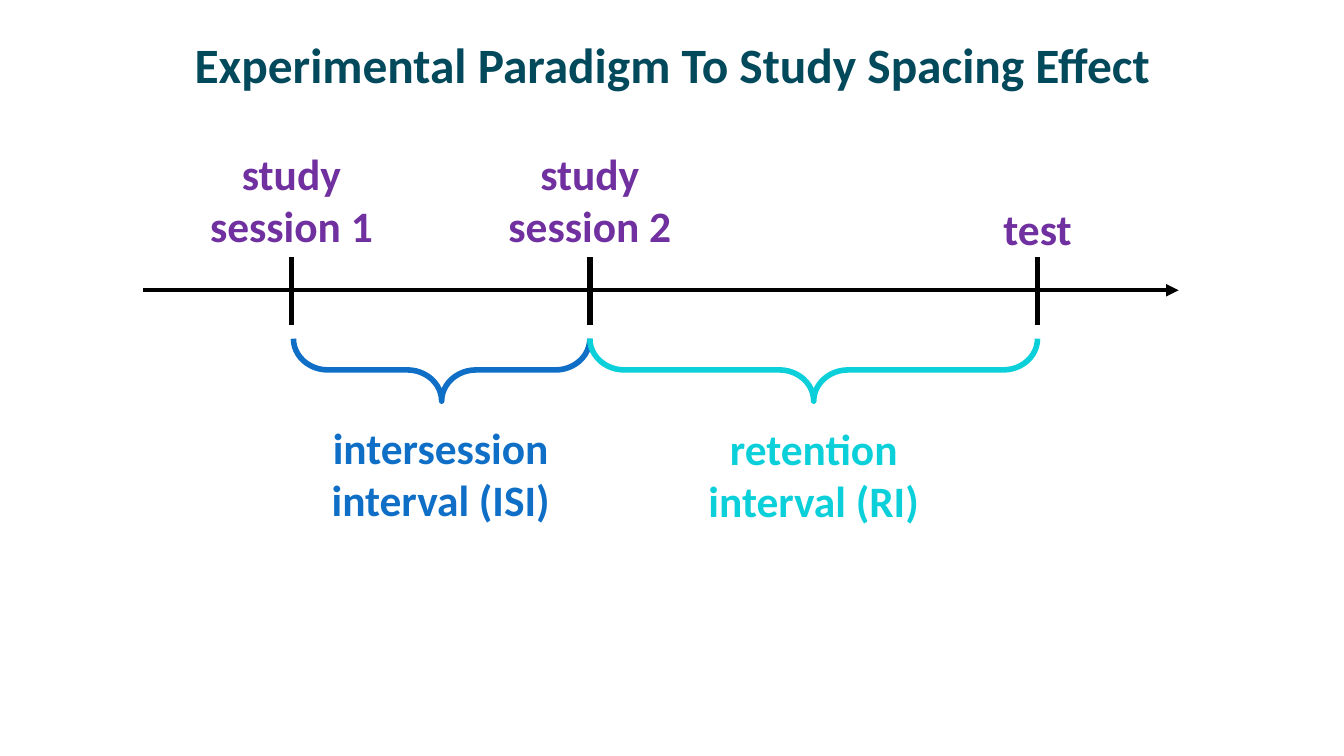
import pptx
import pptx.util
import pptx.dml.color
import pptx.enum.shapes
import pptx.enum.text
import pptx.oxml.ns
import lxml.etree

PX = 9144  # 100 px to the inch
THEME = {
    "font": "Calibri", "title_size": 35.3, "label_size": 31,
    "title": "03495C", "event": "7030A0", "axis": "000000",
    "intersession": "0F6FC6", "retention": "0BD0D9",
    "axis_width": 3, "mark_width": 4,
}


def write(frame, lines, size, color):
    frame.text = "\n".join(lines)
    for paragraph in frame.paragraphs:
        paragraph.alignment = pptx.enum.text.PP_ALIGN.CENTER
        paragraph.font.name = THEME["font"]
        paragraph.font.size = pptx.util.Pt(THEME[size])
        paragraph.font.bold = True
        paragraph.font.color.rgb = pptx.dml.color.RGBColor.from_string(THEME[color])


def draw_line(x1, y1, x2, y2, width):
    connector = slide.shapes.add_connector(
        pptx.enum.shapes.MSO_CONNECTOR.STRAIGHT, x1 * PX, y1 * PX, x2 * PX, y2 * PX)
    connector.line.color.rgb = pptx.dml.color.RGBColor.from_string(THEME["axis"])
    connector.line.width = pptx.util.Pt(THEME[width])
    lxml.etree.SubElement(connector._element.spPr, pptx.oxml.ns.qn("a:effectLst"))
    return connector


deck = pptx.Presentation()
deck.slide_width, deck.slide_height = 1333 * PX, 750 * PX
slide = deck.slides.add_slide(deck.slide_layouts[5])

# Title
title = slide.shapes.title
title.left, title.top, title.width, title.height = 67 * PX, 17 * PX, 1200 * PX, 92 * PX
title.text_frame.vertical_anchor = pptx.enum.text.MSO_ANCHOR.MIDDLE
title.text_frame.auto_size = pptx.enum.text.MSO_AUTO_SIZE.NONE
write(title.text_frame, ["Experimental Paradigm To Study Spacing Effect"],
      "title_size", "title")

# Time axis with its arrowhead
time_axis = draw_line(142, 288, 1169, 288, "axis_width")
lxml.etree.SubElement(time_axis.line._get_or_add_ln(),
                      pptx.oxml.ns.qn("a:tailEnd"), type="triangle")

# Event marks on the axis
session_1, session_2, test = 289, 585, 1029
for event_x in (session_1, session_2, test):
    draw_line(event_x, 255, event_x, 322, "mark_width")

# Interval braces: a right brace turned to point down
brace_depth, brace_top = 62, 336
for start, end, color in ((session_1 + 2, session_2, "intersession"),
                          (session_2, test, "retention")):
    span = end - start
    brace = slide.shapes.add_shape(
        pptx.enum.shapes.MSO_SHAPE.RIGHT_BRACE,
        round(((start + end - brace_depth) / 2) * PX),
        round((brace_top + (brace_depth - span) / 2) * PX),
        brace_depth * PX, span * PX)
    brace.rotation = 90
    brace.adjustments[0], brace.adjustments[1] = 0.55, 0.5
    brace.shadow.inherit = False
    brace.fill.background()
    brace.line.color.rgb = pptx.dml.color.RGBColor.from_string(THEME[color])
    brace.line.width = pptx.util.Pt(THEME["mark_width"])

# Event and interval labels: centre, top, width, height
for lines, center, top, width, height, color in (
        (["study", "session 1"], session_1, 141, 184, 114, "event"),
        (["study", "session 2"], session_2, 141, 184, 114, "event"),
        (["test"], test, 196, 90, 62, "event"),
        (["intersession", "interval (ISI)"], 437, 413, 236, 114, "intersession"),
        (["retention", "interval (RI)"], 807, 414, 232, 114, "retention")):
    label = slide.shapes.add_textbox(
        (center - width // 2) * PX, top * PX, width * PX, height * PX)
    label.text_frame.word_wrap = False
    label.text_frame.auto_size = pptx.enum.text.MSO_AUTO_SIZE.SHAPE_TO_FIT_TEXT
    write(label.text_frame, lines, "label_size", color)

deck.save("out.pptx")
